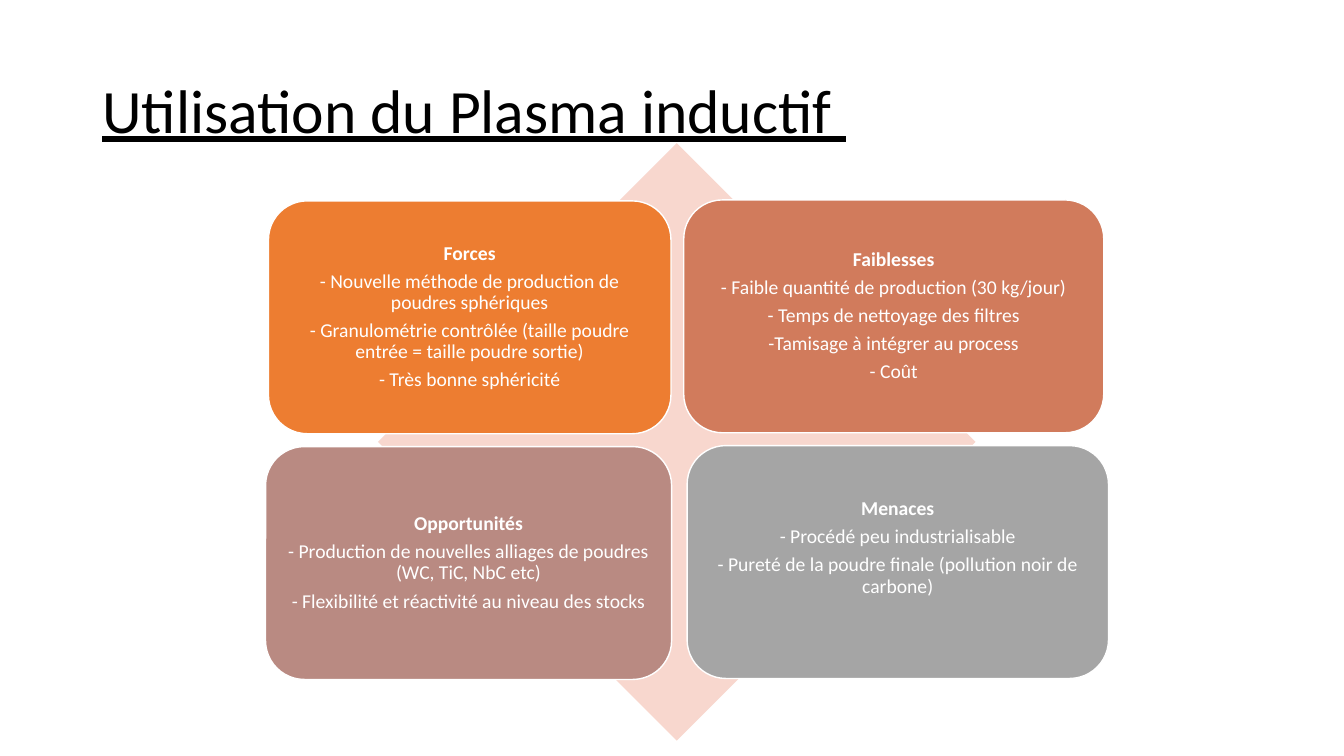
"""Build the SWOT slide on the use of inductive plasma."""
from pptx import Presentation
from pptx.dml.color import RGBColor
from pptx.enum.shapes import MSO_SHAPE
from pptx.enum.text import MSO_ANCHOR, PP_ALIGN
from pptx.util import Pt

DIAMOND, ROUNDED = MSO_SHAPE.DIAMOND, MSO_SHAPE.ROUNDED_RECTANGLE
MIDDLE, LEFT, CENTER = MSO_ANCHOR.MIDDLE, PP_ALIGN.LEFT, PP_ALIGN.CENTER

BLACK = RGBColor(0x00, 0x00, 0x00)
WHITE = RGBColor(0xFF, 0xFF, 0xFF)
PALE_PINK = RGBColor(0xF8, 0xD7, 0xCE)
ORANGE = RGBColor(0xED, 0x7D, 0x31)
TERRACOTTA = RGBColor(0xD1, 0x7B, 0x5C)
ROSE = RGBColor(0xB9, 0x8A, 0x82)
GREY = RGBColor(0xA5, 0xA5, 0xA5)

PANEL_HEIGHT = 166.3
INSET = 4.4
MENACES_LIFT = 20


def write(paragraph, text, size=14, color=WHITE, bold=False, underline=False,
          align=CENTER, after=4.9):
    paragraph.alignment = align
    paragraph.line_spacing = 0.9
    paragraph.space_before = Pt(0)
    paragraph.space_after = Pt(after)
    run = paragraph.add_run()
    run.text = text
    run.font.name = "Calibri"
    run.font.size = Pt(size)
    run.font.color.rgb = color
    run.font.bold = bold
    run.font.underline = underline


prs = Presentation()
prs.slide_width, prs.slide_height = Pt(960), Pt(540)
slide = prs.slides.add_slide(prs.slide_layouts[5])

title = slide.shapes.title
title.left, title.top, title.width, title.height = Pt(66), Pt(28.75), Pt(828), Pt(104.4)
title.text_frame.vertical_anchor = MIDDLE
title.text_frame.word_wrap = True
write(title.text_frame.paragraphs[0], "Utilisation du Plasma inductif ",
      size=44, color=BLACK, underline=True, align=LEFT, after=0)

backdrop = slide.shapes.add_shape(DIAMOND, Pt(270), Pt(102.2), Pt(426.8), Pt(426.8))
backdrop.shadow.inherit = False
backdrop.fill.solid()
backdrop.fill.fore_color.rgb = PALE_PINK
backdrop.line.fill.background()

swot = [
    ("Forces", ORANGE, 191.8, 143.5, 287.5, 0, [
        "- Nouvelle méthode de production de poudres sphériques",
        "- Granulométrie contrôlée (taille poudre entrée = taille poudre sortie)",
        "- Très bonne sphéricité"]),
    ("Faiblesses", TERRACOTTA, 488.4, 142.8, 300, 0, [
        "- Faible quantité de production (30 kg/jour)",
        "- Temps de nettoyage des filtres",
        "-Tamisage à intégrer au process",
        "- Coût"]),
    ("Opportunités", ROSE, 189.7, 319, 290, 0, [
        "- Production de nouvelles alliages de poudres (WC, TiC, NbC etc)",
        "- Flexibilité et réactivité au niveau des stocks"]),
    ("Menaces", GREY, 490.8, 318.3, 301, MENACES_LIFT, [
        "- Procédé peu industrialisable",
        "- Pureté de la poudre finale (pollution noir de carbone)"]),
]

for heading, color, left, top, width, lift, points in swot:
    panel = slide.shapes.add_shape(ROUNDED, Pt(left), Pt(top), Pt(width), Pt(PANEL_HEIGHT))
    panel.shadow.inherit = False
    panel.fill.solid()
    panel.fill.fore_color.rgb = color
    panel.line.color.rgb = WHITE
    panel.line.width = Pt(1)
    frame = panel.text_frame
    frame.word_wrap = True
    frame.vertical_anchor = MIDDLE
    frame.margin_left = frame.margin_right = frame.margin_top = Pt(INSET)
    frame.margin_bottom = Pt(INSET + lift)
    write(frame.paragraphs[0], heading, bold=True)
    for point in points:
        write(frame.add_paragraph(), point)

prs.save("out.pptx")
